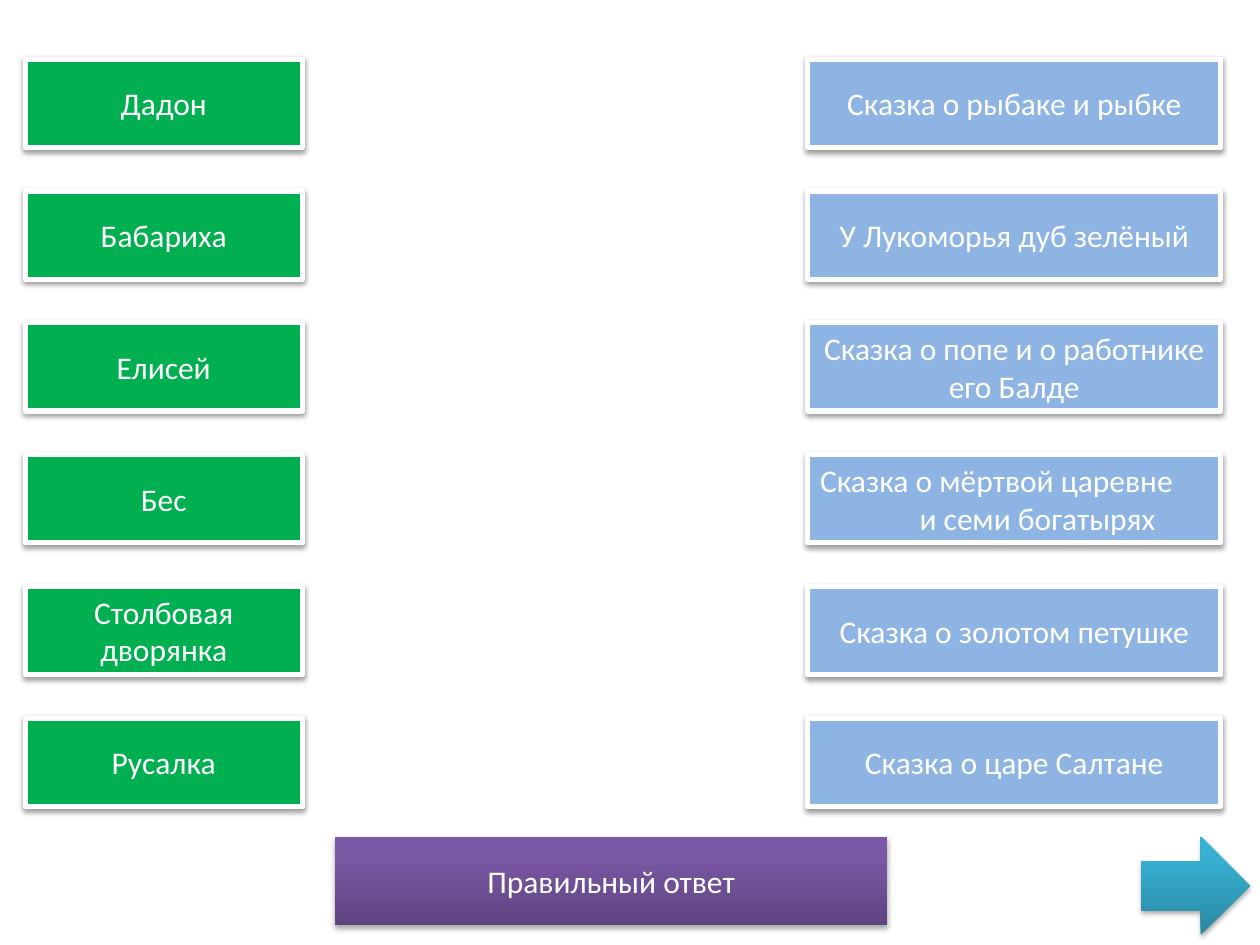
from copy import deepcopy

from lxml.etree import SubElement
from pptx import Presentation
from pptx.dml.color import RGBColor
from pptx.enum.shapes import MSO_SHAPE
from pptx.enum.text import MSO_ANCHOR, PP_ALIGN
from pptx.oxml.ns import qn
from pptx.util import Inches, Pt

COLORS = {
    "white": "FFFFFF",
    "shadow": "000000",
    "hero": "00B050",
    "tale": "8EB4E3",
}
ANSWER_STOPS = [(0, "5F4480"), (0.8, "7B58A6"), (1, "7C57A8")]
ARROW_STOPS = [(0, "2A88A2"), (0.8, "37B1D2"), (1, "34B4D6")]

HEROES = ["Дадон", "Бабариха", "Елисей", "Бес", "Столбовая дворянка", "Русалка"]
TALES = [
    "Сказка о рыбаке и рыбке",
    "У Лукоморья дуб зелёный",
    "Сказка о попе и о работнике его Балде",
    "Сказка о мёртвой царевне\vи семи богатырях",
    "Сказка о золотом петушке",
    "Сказка о царе Салтане",
]
FIRST_TOP, LAST_TOP, CARD_HEIGHT = 0.47, 5.7, 0.7
SECOND_LINE_INDENT = 0.79


def add_shadow(shape, opacity, distance):
    """Give a shape a soft shadow that falls straight down."""
    shape.shadow.inherit = False
    effects = shape._element.spPr.find(qn("a:effectLst"))
    shadow = SubElement(effects, qn("a:outerShdw"), blurRad=str(Pt(3.1)),
                        dist=str(Pt(distance)), dir="5400000", rotWithShape="0")
    color = SubElement(shadow, qn("a:srgbClr"), val=COLORS["shadow"])
    SubElement(color, qn("a:alpha"), val=str(opacity * 1000))


def fill_gradient(shape, stops):
    """Fill a shape from bottom to top with three colour stops."""
    shape.fill.gradient()
    shape.fill.gradient_angle = 90
    stop_list = shape._element.spPr.find(".//" + qn("a:gsLst"))
    stop_list.append(deepcopy(stop_list[-1]))
    for stop, (position, color) in zip(shape.fill.gradient_stops, stops):
        stop.position = position
        stop.color.rgb = RGBColor.from_string(color)


def write_text(shape, text, size=18, color="white", hanging=0):
    """Centre text in a shape, or hang its second line by an indent."""
    frame = shape.text_frame
    frame.word_wrap = True
    frame.vertical_anchor = MSO_ANCHOR.MIDDLE
    para = frame.paragraphs[0]
    para.text = text
    para.alignment = PP_ALIGN.LEFT if hanging else PP_ALIGN.CENTER
    if hanging:
        properties = para._p.get_or_add_pPr()
        properties.set("marL", str(Inches(hanging)))
        properties.set("indent", str(-Inches(hanging)))
    for span in para.runs:
        span.font.name = "Calibri"
        span.font.size = Pt(size)
        span.font.color.rgb = RGBColor.from_string(COLORS[color])


def add_card(page, text, left, top, width, color):
    box = page.shapes.add_shape(MSO_SHAPE.RECTANGLE, Inches(left), Inches(top),
                                Inches(width), Inches(CARD_HEIGHT))
    box.fill.solid()
    box.fill.fore_color.rgb = RGBColor.from_string(COLORS[color])
    box.line.color.rgb = RGBColor.from_string(COLORS["white"])
    box.line.width = Pt(3)
    add_shadow(box, opacity=38, distance=1.6)
    write_text(box, text, hanging=SECOND_LINE_INDENT if "\v" in text else 0)


def add_column(page, texts, left, width, color):
    pitch = (LAST_TOP - FIRST_TOP) / (len(texts) - 1)
    for row, text in enumerate(texts):
        add_card(page, text, left, FIRST_TOP + row * pitch, width, color)


def add_button(page, kind, left, top, width, height, stops):
    button = page.shapes.add_shape(kind, Inches(left), Inches(top),
                                   Inches(width), Inches(height))
    fill_gradient(button, stops)
    button.line.fill.background()
    add_shadow(button, opacity=35, distance=1.8)
    return button


def main():
    deck = Presentation()
    deck.slide_width, deck.slide_height = Inches(10), Inches(7.5)
    page = deck.slides.add_slide(deck.slide_layouts[6])

    # Answer button
    answer = add_button(page, MSO_SHAPE.RECTANGLE, 2.66, 6.64, 4.38, 0.7, ANSWER_STOPS)
    write_text(answer, "Правильный ответ")

    # Heroes on the left, tales on the right
    add_column(page, HEROES, left=0.2, width=2.2, color="hero")
    add_column(page, TALES, left=6.41, width=3.28, color="tale")

    # Arrow to the next page
    add_button(page, MSO_SHAPE.RIGHT_ARROW, 9.06, 6.64, 0.86, 0.78, ARROW_STOPS)

    deck.save("out.pptx")


if __name__ == "__main__":
    main()
